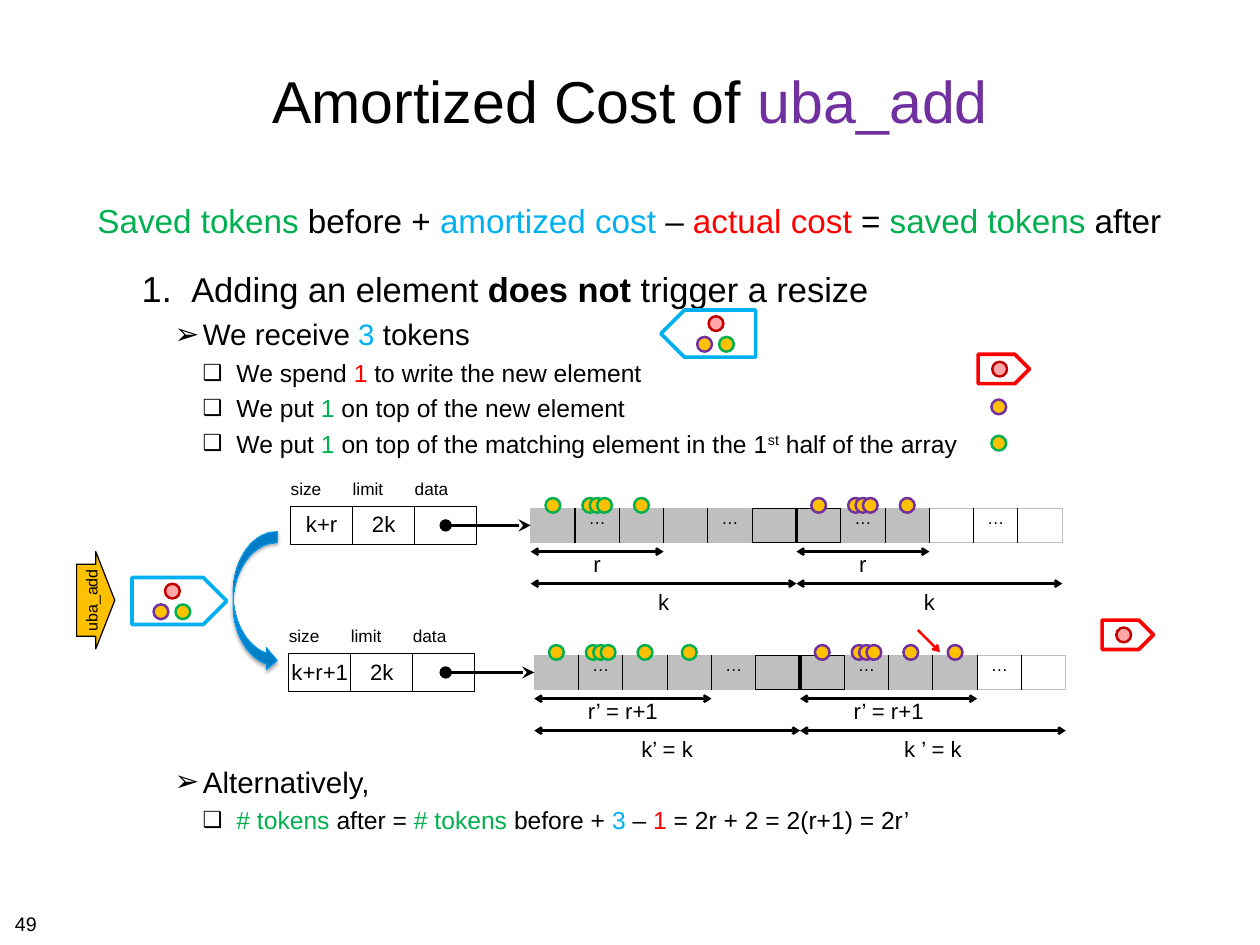
"""Build the slide on the amortized cost of uba_add."""
from lxml.etree import SubElement
from pptx import Presentation
from pptx.dml.color import RGBColor
from pptx.enum.shapes import MSO_CONNECTOR, MSO_SHAPE
from pptx.enum.text import MSO_ANCHOR, PP_ALIGN
from pptx.oxml.ns import qn
from pptx.util import Pt


class Theme:
    font = "Arial"
    black, grey, gold = "000000", "BFBFBF", "FFC000"
    green, purple, cyan = "00B050", "7030A0", "00B0F0"
    red, dark_red = "FF0000", "C00000"
    deep_blue, blue = "0079BE", "009DF7"
    title, formula, case, point, detail = 48, 27, 28, 24, 20
    label, page, cell, tag = 18, 16, 14, 13


GREEN, CYAN, RED, PURPLE = ({"color": color} for color in (Theme.green, Theme.cyan, Theme.red, Theme.purple))
LEVELS = {
    "case": (Theme.case, 76.3, 40.3, 7, "a:buAutoNum", {"type": "arabicPeriod"}, 105),
    "point": (Theme.point, 85.7, 23, 6, "a:buChar", {"char": "➢"}, 100),
    "detail": (Theme.detail, 113, 27.4, 4.8, "a:buChar", {"char": "❑"}, 90),
}
TOKEN, CELL, ARRAY_HEIGHT, HALF = 12, 36, 27.4, 6


def add_run(paragraph, text, *, size, color=Theme.black, bold=False, baseline=0):
    run = paragraph.add_run()
    run.text = text
    run.font.name, run.font.size, run.font.bold = Theme.font, Pt(size), bold
    run.font.color.rgb = RGBColor.from_string(color)
    if baseline:
        run.font._element.set("baseline", str(baseline * 1000))


def set_fill(fill, color):
    if color:
        fill.solid()
        fill.fore_color.rgb = RGBColor.from_string(color)
    else:
        fill.background()


class Painter:
    def __init__(self, slide, theme):
        self.slide, self.theme = slide, theme

    def frame(self, left, top, width, height, anchor=MSO_ANCHOR.TOP):
        frame = self.slide.shapes.add_textbox(Pt(left), Pt(top), Pt(width), Pt(height)).text_frame
        frame.word_wrap, frame.vertical_anchor = True, anchor
        frame.margin_left = frame.margin_right = frame.margin_top = frame.margin_bottom = 0
        return frame

    def text(self, left, top, width, height, runs, size, align=PP_ALIGN.LEFT, anchor=MSO_ANCHOR.TOP):
        paragraph = self.frame(left, top, width, height, anchor).paragraphs[0]
        paragraph.alignment = align
        for text, style in runs:
            add_run(paragraph, text, size=size, **style)

    def outline(self, left, top, width, height, items):
        frame = self.frame(left, top, width, height)
        for index, (level, runs) in enumerate(items):
            size, indent, hang, before, bullet, attributes, scale = LEVELS[level]
            paragraph = frame.add_paragraph() if index else frame.paragraphs[0]
            paragraph.space_before = Pt(before if index else 0)
            properties = paragraph._p.get_or_add_pPr()
            properties.set("marL", str(Pt(indent)))
            properties.set("indent", str(-Pt(hang)))
            SubElement(SubElement(properties, qn("a:buClr")), qn("a:srgbClr"), val=self.theme.black)
            SubElement(properties, qn("a:buSzPct"), val=str(scale * 1000))
            SubElement(properties, qn("a:buFont"), typeface=self.theme.font)
            SubElement(properties, qn(bullet), **attributes)
            for text, style in runs:
                add_run(paragraph, text, size=size, **style)

    def shape(self, kind, left, top, width, height, line, weight, fill=None):
        shape = self.slide.shapes.add_shape(kind, Pt(left), Pt(top), Pt(width), Pt(height))
        shape.shadow.inherit = False
        shape.line.color.rgb, shape.line.width = RGBColor.from_string(line), Pt(weight)
        set_fill(shape.fill, fill)
        return shape

    def token(self, left, top, color):
        spent = color == self.theme.dark_red
        fill = self.theme.red if spent else self.theme.gold
        token = self.shape(MSO_SHAPE.OVAL, left, top, TOKEN, TOKEN, color, 2, fill)
        if spent:
            SubElement(token._element.spPr.find(qn("a:solidFill"))[0], qn("a:alpha"), val="35000")

    def income(self, left, top, flipped=False):
        plate = self.shape(MSO_SHAPE.PENTAGON, left, top, 77, 38.2, self.theme.cyan, 3)
        plate.rotation = 180 if flipped else 0
        start = left + (TOKEN if flipped else 0)
        for x, y, color in ((26.8, 5, self.theme.dark_red), (17.5, 21.8, self.theme.purple), (35.3, 21.8, self.theme.green)):
            self.token(start + x, top + y, color)

    def payment(self, left, top):
        self.shape(MSO_SHAPE.PENTAGON, left, top, 41.8, 23.8, self.theme.red, 3)
        self.token(left + 11.5, top + 6, self.theme.dark_red)

    def arrow(self, start, end, color=Theme.black, head="none", tail="arrow", size="med"):
        connector = self.slide.shapes.add_connector(MSO_CONNECTOR.STRAIGHT, *map(Pt, start + end))
        connector.line.color.rgb, connector.line.width = RGBColor.from_string(color), Pt(2)
        for name, kind in (("a:headEnd", head), ("a:tailEnd", tail)):
            SubElement(connector._element.spPr.find(qn("a:ln")), qn(name), type=kind, w=size, len=size)
        SubElement(connector._element.spPr, qn("a:effectLst"))

    def table(self, left, top, width, columns, heights):
        position = map(Pt, (left, top, width * columns, sum(heights)))
        table = self.slide.shapes.add_table(len(heights), columns, *position).table
        table.first_row = table.horz_banding = False
        for column in table.columns:
            column.width = Pt(width)
        for row, height in zip(table.rows, heights):
            row.height = Pt(height)
        return table

    def cell(self, cell, text, borders, size=Theme.cell, fill=None, align=PP_ALIGN.CENTER, anchor=MSO_ANCHOR.TOP):
        cell.margin_left = cell.margin_right = cell.margin_top = cell.margin_bottom = 0
        cell.vertical_anchor = anchor
        for side, (color, width) in zip("LRTB", borders):
            line = SubElement(cell._tc.get_or_add_tcPr(), qn(f"a:ln{side}"), w=str(Pt(width)))
            paint = SubElement(line, qn("a:solidFill" if color else "a:noFill"))
            if color:
                SubElement(paint, qn("a:srgbClr"), val=color)
        set_fill(cell.fill, fill)
        if text:
            cell.text_frame.paragraphs[0].alignment = align
            add_run(cell.text_frame.paragraphs[0], text, size=size)

    def header(self, left, top, size_text):
        table = self.table(left, top, 50.4, 3, [21.6, 31])
        none, thin = (None, 1), (self.theme.black, 1)
        for column, (name, value) in enumerate((("size", size_text), ("limit", "2k"), ("data", ""))):
            self.cell(table.cell(0, column), name, (none, none, none, thin), align=PP_ALIGN.LEFT)
            self.cell(table.cell(1, column), value, [thin] * 4, self.theme.label, anchor=MSO_ANCHOR.MIDDLE)

    def cells(self, left, top, used):
        count = 2 * HALF
        table = self.table(left, top, CELL, count, [ARRAY_HEIGHT])
        pale, thin, thick = (self.theme.grey, 1), (self.theme.black, 1), (self.theme.black, 3)
        edges = [pale] + [thick if index == HALF else thin for index in range(1, count)] + [pale]
        for index in range(count):
            rim = thin if index in (HALF - 1, HALF) else pale
            fill = self.theme.grey if index < HALF + used else None
            self.cell(table.cell(0, index), "…" if index % 3 == 1 else "", (*edges[index:index + 2], rim, rim), fill=fill)

    def array(self, left, top, header_left, used, size_text, used_text, half_texts):
        self.cells(left, top, used)
        self.header(header_left, top - 23.5, size_text)
        middle = top + ARRAY_HEIGHT / 2
        self.arrow((362.2, middle), (left, middle), head="oval", tail="stealth", size="lg")
        centers = [18, 48, 54, 60, 90] + [CELL * (index + 0.5) for index in range(3, used)]
        for half, (color, half_text) in enumerate(zip((self.theme.green, self.theme.purple), half_texts)):
            start = left + half * HALF * CELL
            for center in centers:
                self.token(start + center - TOKEN / 2, top - 8.6, color)
            for length, offset, gap, text in ((used, 35, -1, used_text), (HALF, 61, 3.6, half_text)):
                width, level = length * CELL, top + offset
                self.arrow((start, level), (start + width, level), head="arrow")
                self.text(start, level + gap, width, 21, [(text, {})], self.theme.label, PP_ALIGN.CENTER)

    def step(self):
        curve = self.shape(MSO_SHAPE.CURVED_RIGHT_ARROW, 189.4, 432, 36, 113.8, self.theme.blue, 0.75)
        curve.fill.gradient()
        curve.fill.gradient_angle = 90
        for stop, color, position in zip(curve.fill.gradient_stops, (self.theme.deep_blue, self.theme.blue), (0, 0.8)):
            stop.color.rgb, stop.position = RGBColor.from_string(color), position
        effects = curve._element.spPr.find(qn("a:effectLst"))
        shadow = SubElement(effects, qn("a:outerShdw"), blurRad=str(Pt(3.1)), dist=str(Pt(1.8)), dir="5400000")
        SubElement(SubElement(shadow, qn("a:srgbClr"), val=self.theme.black), qn("a:alpha"), val="35000")
        block = self.shape(MSO_SHAPE.DOWN_ARROW, 38.2, 472.3, 79.2, 31, self.theme.black, 1, self.theme.gold)
        block.rotation = 270
        block.adjustments[0], block.adjustments[1] = 0.74, 0.5
        frame = block.text_frame
        frame.word_wrap, frame.vertical_anchor = False, MSO_ANCHOR.MIDDLE
        frame.margin_top, frame.margin_bottom = Pt(4.3), 0
        frame.paragraphs[0].alignment = PP_ALIGN.CENTER
        add_run(frame.paragraphs[0], "uba_add", size=self.theme.tag)


def main():
    presentation = Presentation()
    presentation.slide_width, presentation.slide_height = Pt(1024), Pt(768)
    painter = Painter(presentation.slides.add_slide(presentation.slide_layouts[6]), Theme)
    title = [("Amortized Cost of ", {}), ("uba_add", PURPLE)]
    painter.text(75, 22, 874, 118, title, Theme.title, PP_ALIGN.CENTER, MSO_ANCHOR.MIDDLE)
    painter.text(79.2, 163, 890, 32, [
        ("Saved tokens ", GREEN), ("before + ", {}), ("amortized cost ", CYAN), ("– ", {}),
        ("actual cost", RED), (" = ", {}), ("saved tokens", GREEN), (" after", {})], Theme.formula)
    painter.outline(79.2, 217.5, 880, 160, [
        ("case", [("Adding an element ", {}), ("does not ", {"bold": True}), ("trigger a resize", {})]),
        ("point", [("We receive", {}), (" 3 ", CYAN), ("tokens", {})]),
        ("detail", [("We spend ", {}), ("1", RED), (" to write the new element", {})]),
        ("detail", [("We put ", {}), ("1", GREEN), (" on top of the new element", {})]),
        ("detail", [("We put", {}), (" 1 ", GREEN), ("on top of the matching element in the 1", {}),
                    ("st", {"baseline": 30}), (" half of the array", {})])])
    painter.outline(79.2, 620.5, 880, 60, [
        ("point", [("Alternatively,", {})]),
        ("detail", [("# tokens ", GREEN), ("after = ", {}), ("# tokens ", GREEN), ("before + ", {}), ("3", CYAN),
                    (" –", {}), (" 1 ", RED), ("= 2r + 2 = 2(r+1) = 2r’", {})])])
    painter.array(431.3, 413.3, 236.2, 3, "k+r", "r", ("k", "k"))
    painter.array(434.2, 532.8, 234.7, 4, "k+r+1", "r’ = r+1", ("k’ = k", "k ’ = k"))
    painter.step()
    painter.income(107.3, 469.4)
    painter.income(537.1, 252, flipped=True)
    painter.payment(895.7, 504)
    painter.payment(794.9, 288)
    painter.token(805.7, 324.7, Theme.purple)
    painter.token(805.7, 354.2, Theme.green)
    painter.arrow((746, 512), (764, 530), Theme.red)
    painter.text(12.2, 741, 30, 20, [("49", {})], Theme.page)
    presentation.save("out.pptx")


if __name__ == "__main__":
    main()
